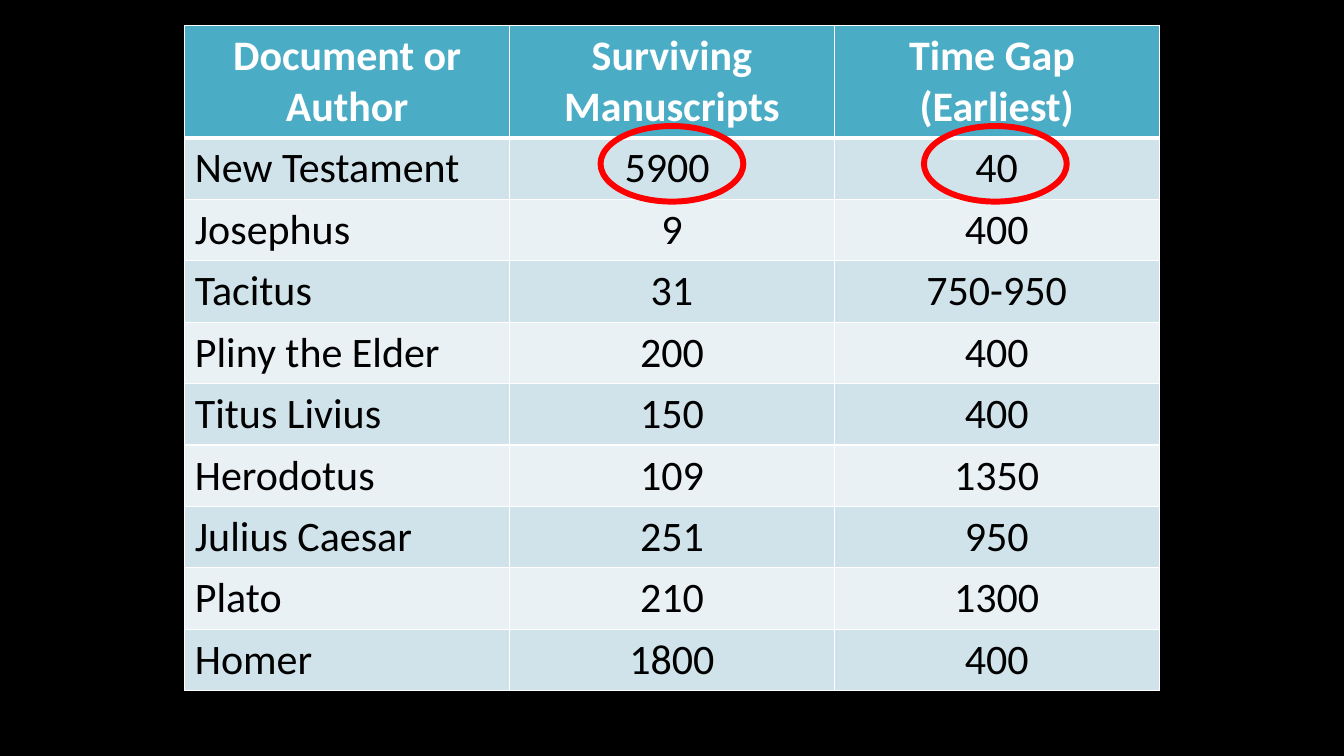
from lxml import etree
from pptx import Presentation
from pptx.dml.color import RGBColor
from pptx.enum.shapes import MSO_SHAPE
from pptx.enum.text import PP_ALIGN
from pptx.oxml.ns import qn
from pptx.util import Pt

OVAL = MSO_SHAPE.OVAL
LEFT, CENTER = PP_ALIGN.LEFT, PP_ALIGN.CENTER

BLACK = RGBColor(0x00, 0x00, 0x00)
WHITE = RGBColor(0xFF, 0xFF, 0xFF)
TEAL = RGBColor(0x4B, 0xAC, 0xC6)
RED = RGBColor(0xFF, 0x00, 0x00)
BANDS = (RGBColor(0xD0, 0xE3, 0xEA), RGBColor(0xE9, 0xF1, 0xF5))

# Each line of a cell is its own paragraph.
ROWS = [
    ("Document or Author", "Surviving\nManuscripts", "Time Gap \n(Earliest)"),
    ("New Testament", "5900 ", "40"),
    ("Josephus", "9", "400"),
    ("Tacitus", "31", "750-950"),
    ("Pliny the Elder", "200", "400"),
    ("Titus Livius", "150", "400"),
    ("Herodotus", "109", "1350"),
    ("Julius Caesar", "251", "950"),
    ("Plato", "210", "1300"),
    ("Homer", "1800", "400"),
]

TABLE_LEFT, TABLE_TOP = 132, 18
COLUMN_WIDTH = 232
HEADER_HEIGHT, ROW_HEIGHT = 80, 43.9
HIGHLIGHT_LEFTS = (429, 660)
HIGHLIGHT_TOP, HIGHLIGHT_WIDTH, HIGHLIGHT_HEIGHT = 90, 102, 54


def add_borders(cell, top, bottom):
    """Draw white cell edges; top and bottom are widths in points."""
    properties = cell._tc.get_or_add_tcPr()
    for side, width in (("L", 1), ("R", 1), ("T", top), ("B", bottom)):
        line = etree.SubElement(properties, qn(f"a:ln{side}"), w=str(Pt(width)))
        fill = etree.SubElement(line, qn("a:solidFill"))
        etree.SubElement(fill, qn("a:srgbClr"), val=str(WHITE))


def fill_cell(cell, text, row, column):
    header = row == 0
    add_borders(cell, top=3 if row == 1 else 1, bottom=3 if header else 1)
    cell.fill.solid()
    cell.fill.fore_color.rgb = TEAL if header else BANDS[(row - 1) % 2]
    frame = cell.text_frame
    for number, line in enumerate(text.split("\n")):
        para = frame.add_paragraph() if number else frame.paragraphs[0]
        para.alignment = CENTER if header or column else LEFT
        span = para.add_run()
        span.text = line
        span.font.name = "Calibri"
        span.font.size = Pt(30)
        span.font.bold = header
        span.font.color.rgb = WHITE if header else BLACK


def add_manuscript_table(page):
    heights = [HEADER_HEIGHT] + [ROW_HEIGHT] * (len(ROWS) - 1)
    columns = len(ROWS[0])
    table = page.shapes.add_table(
        len(ROWS), columns, Pt(TABLE_LEFT), Pt(TABLE_TOP),
        Pt(COLUMN_WIDTH * columns), Pt(sum(heights))).table
    for column in table.columns:
        column.width = Pt(COLUMN_WIDTH)
    for row, (height, texts) in enumerate(zip(heights, ROWS)):
        table.rows[row].height = Pt(height)
        for column, text in enumerate(texts):
            fill_cell(table.cell(row, column), text, row, column)


def add_highlight(page, left):
    ring = page.shapes.add_shape(
        OVAL, Pt(left), Pt(HIGHLIGHT_TOP),
        Pt(HIGHLIGHT_WIDTH), Pt(HIGHLIGHT_HEIGHT))
    ring.shadow.inherit = False
    ring.fill.background()
    ring.line.color.rgb = RED
    ring.line.width = Pt(4.25)


def main():
    deck = Presentation()
    deck.slide_width, deck.slide_height = Pt(960), Pt(540)
    page = deck.slides.add_slide(deck.slide_layouts[6])
    page.background.fill.solid()
    page.background.fill.fore_color.rgb = BLACK
    add_manuscript_table(page)
    for left in HIGHLIGHT_LEFTS:
        add_highlight(page, left)
    deck.save("out.pptx")


if __name__ == "__main__":
    main()
